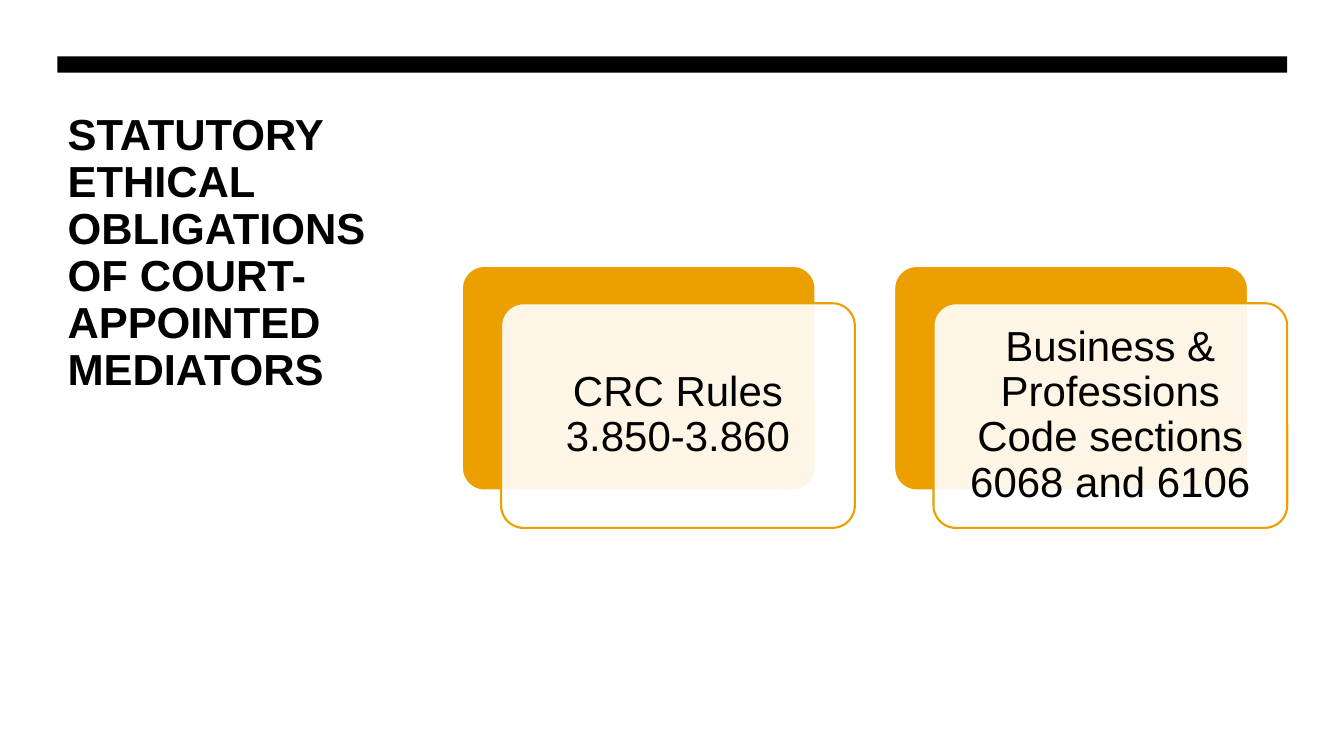
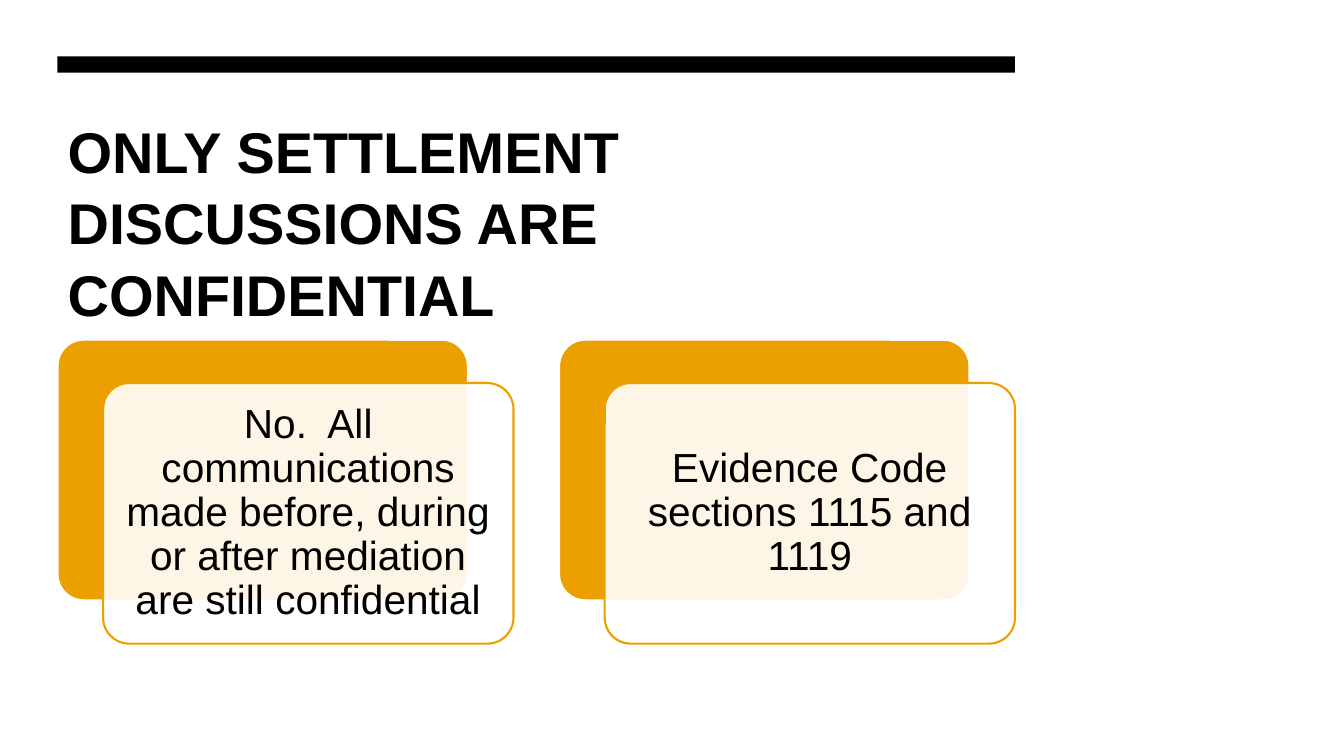
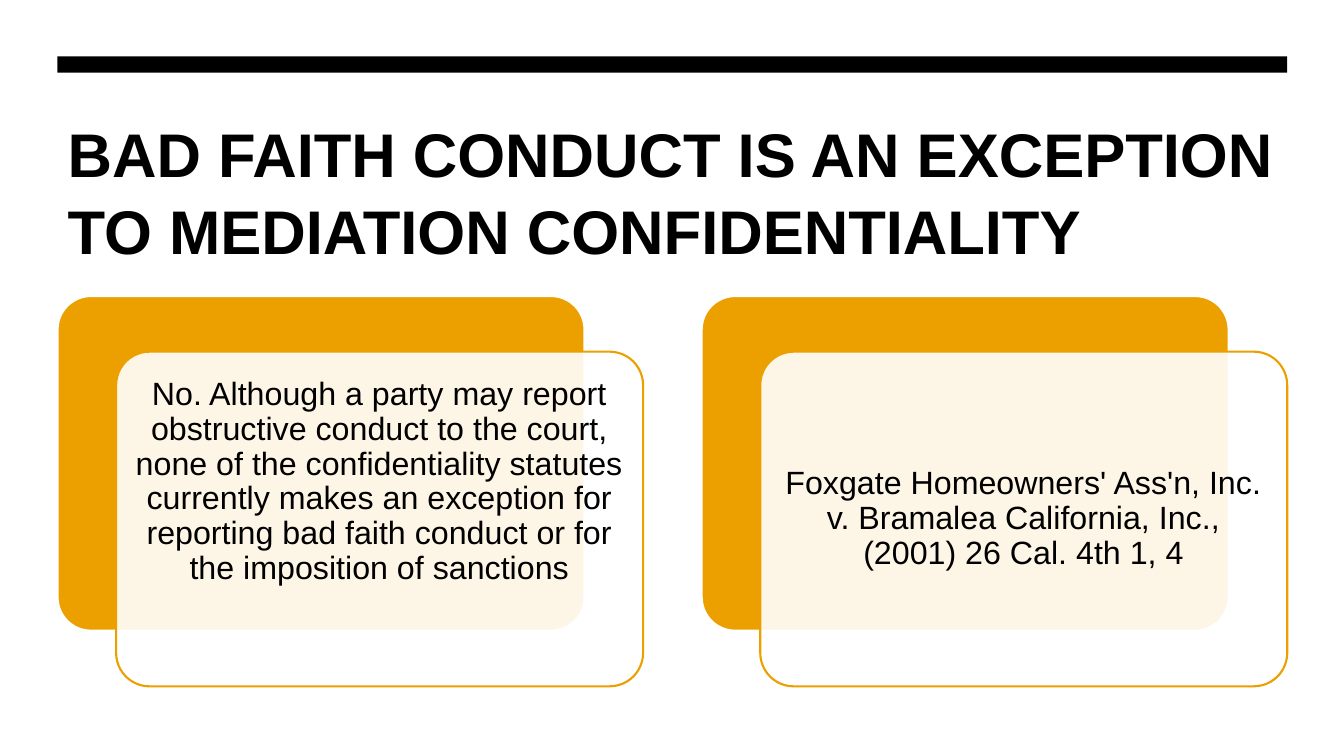
from lxml import etree
from pptx import Presentation
from pptx.dml.color import RGBColor
from pptx.enum.shapes import MSO_SHAPE as Shape
from pptx.enum.text import MSO_ANCHOR as Anchor, MSO_AUTO_SIZE as Fit, PP_ALIGN as Align
from pptx.oxml.ns import qn
from pptx.util import Cm, Pt

BLACK = RGBColor(0, 0, 0)
WHITE = RGBColor(255, 255, 255)
AMBER = RGBColor(0xEB, 0xA0, 0x00)

SLIDES = [
    {
        "title": "STATUTORY ETHICAL OBLIGATIONS OF COURT-APPOINTED MEDIATORS",
        "title_size": 31, "title_spacing": 0.9, "title_box": (8.76, 11.3),
        "bar_width": 30.99, "cards_left": 11.64, "cards_top": 6.7,
        "card_size": 30, "inset": 0.3,
        "cards": [("CRC Rules 3.850-3.860", 0),
                  ("Business & Professions Code sections 6068 and 6106", 0)],
    },
    {
        "title": "ONLY SETTLEMENT DISCUSSIONS ARE CONFIDENTIAL",
        "title_size": 41, "title_spacing": 1.04, "title_box": (24.13, 4.06),
        "bar_width": 24.13, "cards_left": 1.45, "cards_top": 8.56,
        "card_size": 29, "inset": 0.3,
        "cards": [("No.  All communications made before, during or after "
                   "mediation are still confidential", 0),
                  ("Evidence Code sections 1115 and 1119", 0)],
    },
    {
        "title": "BAD FAITH CONDUCT IS AN EXCEPTION TO MEDIATION CONFIDENTIALITY",
        "title_size": 44, "title_spacing": 1.04, "title_box": (30.99, 4.06),
        "bar_width": 30.99, "cards_left": 1.45, "cards_top": 7.46,
        "card_size": 23, "inset": 0.24,
        "cards": [("No. Although a party may report obstructive conduct to the "
                   "court, none of the confidentiality statutes currently makes "
                   "an exception for reporting bad faith conduct or for the "
                   "imposition of sanctions", 1.86),
                  ("Foxgate Homeowners' Ass'n, Inc. v. Bramalea California, "
                   "Inc., (2001) 26 Cal. 4th 1, 4", 0)],
    },
]

LEFT, BAR_TOP, BAR_HEIGHT, TITLE_TOP = 1.45, 1.42, 0.41, 2.72
CARD_RATIO = 0.635
SHIFT_RATIO = 1 / 9
DROP_RATIO = 0.95 / 9


def set_all(obj, values):
    for name, value in values.items():
        setattr(obj, name, value)


def write(sp, text, size, frame, para, bold=False):
    tf = sp.text_frame
    tf.text = text
    set_all(tf, {"word_wrap": True, "auto_size": Fit.NONE, **frame})
    p = tf.paragraphs[0]
    set_all(p, para)
    r = p.runs[0]
    set_all(r.font, {"name": "Arial", "size": Pt(size), "bold": bold})
    r.font.color.rgb = BLACK


def add_box(slide, kind, box, fill, line=None):
    sp = slide.shapes.add_shape(kind, *map(Cm, box))
    sp.shadow.inherit = False
    sp.fill.solid()
    sp.fill.fore_color.rgb = fill
    if line is None:
        sp.line.fill.background()
    else:
        sp.adjustments[0] = 0.1
        sp.line.color.rgb = line
        sp.line.width = Pt(1.5)
    return sp


def set_opacity(sp, percent):
    color = sp.fill._xPr.find(qn("a:solidFill"))[0]
    etree.SubElement(color, qn("a:alpha")).set("val", str(percent * 1000))


def add_title(slide, d):
    sp = slide.shapes.title
    width, height = d["title_box"]
    set_all(sp, {"left": Cm(LEFT), "top": Cm(TITLE_TOP),
                 "width": Cm(width), "height": Cm(height)})
    write(sp, d["title"], d["title_size"], {"vertical_anchor": Anchor.TOP},
          {"alignment": Align.LEFT, "line_spacing": d["title_spacing"]}, True)


def add_cards(slide, d):
    n = len(d["cards"])
    span = LEFT + d["bar_width"] - d["cards_left"]
    w = span / (n + (2 * n - 1) * SHIFT_RATIO)
    h, shift, drop = w * CARD_RATIO, w * SHIFT_RATIO, w * DROP_RATIO
    side = Cm(d["inset"])
    for i, (text, lift) in enumerate(d["cards"]):
        x, y = d["cards_left"] + i * (w + 2 * shift), d["cards_top"]
        add_box(slide, Shape.ROUNDED_RECTANGLE, (x, y, w, h), AMBER, WHITE)
        sp = add_box(slide, Shape.ROUNDED_RECTANGLE,
                     (x + shift, y + drop, w, h), WHITE, AMBER)
        set_opacity(sp, 90)
        write(sp, text, d["card_size"],
              {"vertical_anchor": Anchor.MIDDLE, "margin_left": side,
               "margin_right": side, "margin_top": side,
               "margin_bottom": Cm(d["inset"] + lift)},
              {"alignment": Align.CENTER, "line_spacing": 0.9})


def main():
    prs = Presentation()
    set_all(prs, {"slide_width": Cm(33.87), "slide_height": Cm(19.05)})
    for d in SLIDES:
        slide = prs.slides.add_slide(prs.slide_layouts[5])
        add_title(slide, d)
        add_box(slide, Shape.RECTANGLE,
                (LEFT, BAR_TOP, d["bar_width"], BAR_HEIGHT), BLACK)
        add_cards(slide, d)
    prs.save("out.pptx")


if __name__ == "__main__":
    main()
